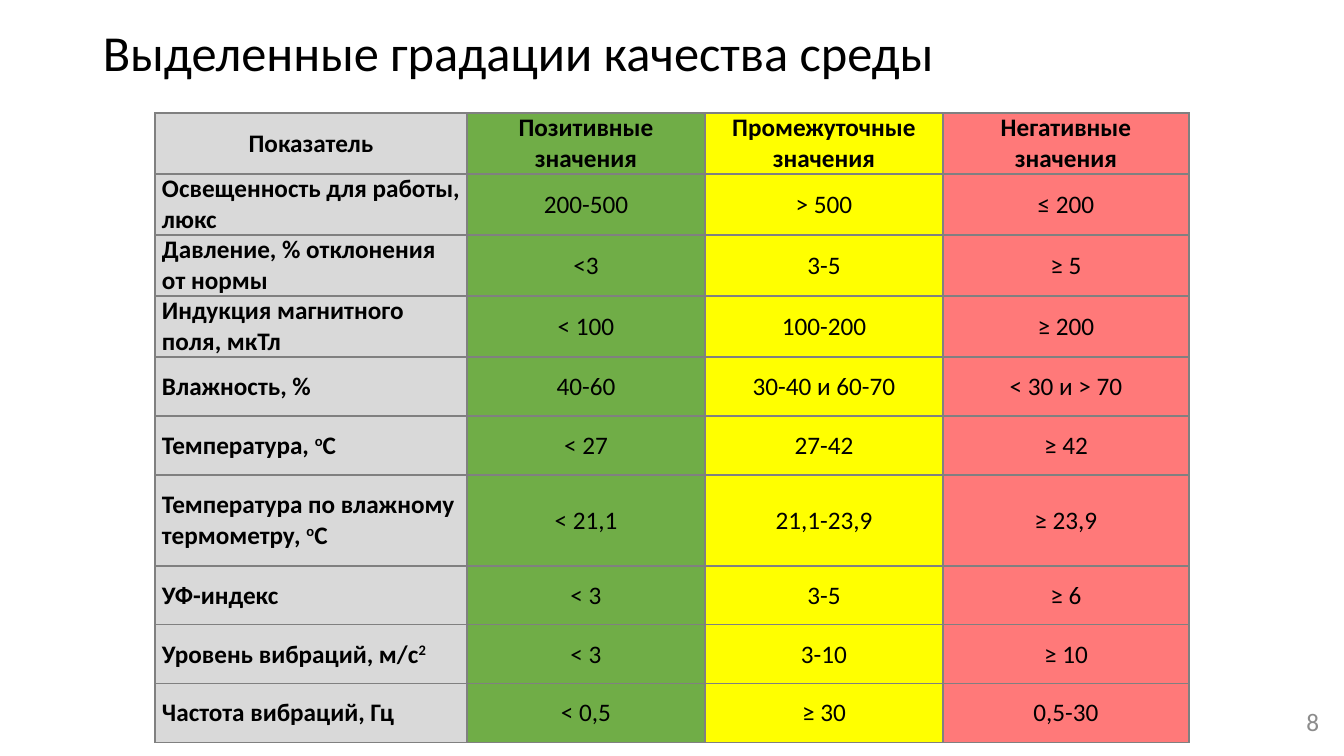
"""Build the slide with the table of environment quality grades."""
import pptx
import pptx.dml.color
import pptx.enum.text
import pptx.oxml
import pptx.oxml.ns
import pptx.util

TITLE = "Выделенные градации качества среды"
PAGE_NUMBER = "8"
SUPERSCRIPT_MARK = "^"
HEADER = ("Показатель", "Позитивные значения", "Промежуточные значения", "Негативные значения")
INDICATORS = [
    ("Освещенность для работы, люкс", "200-500", "> 500", "≤ 200"),
    ("Давление, % отклонения от нормы", "<3", "3-5", "≥ 5"),
    ("Индукция магнитного поля, мкТл", "< 100", "100-200", "≥ 200"),
    ("Влажность, %", "40-60", "30-40 и 60-70", "< 30 и > 70"),
    ("Температура, ^o^C", "< 27", "27-42", "≥ 42"),
    ("Температура по влажному термометру, ^o^C", "< 21,1", "21,1-23,9", "≥ 23,9"),
    ("УФ-индекс", "< 3", "3-5", "≥ 6"),
    ("Уровень вибраций, м/с^2^", "< 3", "3-10", "≥ 10"),
    ("Частота вибраций, Гц", "< 0,5", "≥ 30", "0,5-30"),
]

COLORS = {
    "text": "000000",
    "number": "8C8C8C",
    "border": "808080",
    "indicator": "D9D9D9",
    "positive": "70AD47",
    "middle": "FFFF00",
    "negative": "FF7979",
}
COLUMN_FILLS = ("indicator", "positive", "middle", "negative")
COLUMN_WIDTHS = (312, 238, 238, 246)
ROW_HEIGHTS = (61, 61, 61, 61, 59, 59, 91, 59, 59, 59)
SLIDE_SIZE = (1344, 756)
TABLE_LEFT, TABLE_TOP = 155, 113
CELL_INSET = 7
FONT = "Calibri"
ALIGN = pptx.enum.text.PP_ALIGN
MIDDLE = pptx.enum.text.MSO_ANCHOR.MIDDLE


def px(length):
    return pptx.util.Emu(round(length * 914400 / 100.8))


def color(name):
    return pptx.dml.color.RGBColor.from_string(COLORS[name])


def write(frame, text, size, align, color_name="text", bold=False):
    para = frame.paragraphs[0]
    para.alignment = align
    para.font.name = FONT
    para.font.size = pptx.util.Pt(size)
    para.font.bold = bold
    para.font.color.rgb = color(color_name)
    for index, part in enumerate(text.split(SUPERSCRIPT_MARK)):
        if part:
            span = para.add_run()
            span.text = part
            if index % 2:
                span.font._element.set("baseline", "30000")
    return para


def add_text(page, place, text, size, align, color_name="text"):
    box = page.shapes.add_textbox(*map(px, place))
    box.text_frame.word_wrap = True
    box.text_frame.vertical_anchor = MIDDLE
    return write(box.text_frame, text, size, align, color_name)


def add_borders(cell):
    properties = cell._tc.get_or_add_tcPr()
    for position, side in enumerate(("lnL", "lnR", "lnT", "lnB")):
        border = pptx.oxml.parse_xml(
            f'<a:{side} {pptx.oxml.ns.nsdecls("a")} w="12700"><a:solidFill>'
            f'<a:srgbClr val="{COLORS["border"]}"/></a:solidFill></a:{side}>'
        )
        properties.insert(position, border)


def add_grades(page):
    rows = [HEADER, *INDICATORS]
    frame = page.shapes.add_table(
        len(rows), len(HEADER), px(TABLE_LEFT), px(TABLE_TOP),
        px(sum(COLUMN_WIDTHS)), px(sum(ROW_HEIGHTS)),
    )
    table = frame.table
    for column, width in zip(table.columns, COLUMN_WIDTHS):
        column.width = px(width)
    for row, height in zip(table.rows, ROW_HEIGHTS):
        row.height = px(height)
    for row_index, texts in enumerate(rows):
        for column_index, text in enumerate(texts):
            cell = table.cell(row_index, column_index)
            cell.fill.solid()
            cell.fill.fore_color.rgb = color(COLUMN_FILLS[column_index])
            cell.vertical_anchor = MIDDLE
            cell.margin_left = cell.margin_right = px(CELL_INSET)
            cell.margin_top = cell.margin_bottom = 0
            is_header, is_label = row_index == 0, column_index == 0
            align = ALIGN.LEFT if is_label and not is_header else ALIGN.CENTER
            write(cell.text_frame, text, 18, align, bold=is_header or is_label)
            add_borders(cell)


def main():
    deck = pptx.Presentation()
    deck.slide_width, deck.slide_height = map(px, SLIDE_SIZE)
    page = deck.slides.add_slide(deck.slide_layouts[6])
    title = add_text(page, (93, 11, 1159, 89), TITLE, 36, ALIGN.LEFT)
    title.line_spacing = 0.9
    add_grades(page)
    add_text(page, (1027, 701, 302, 40), PAGE_NUMBER, 18, ALIGN.RIGHT, "number")
    deck.save("out.pptx")


if __name__ == "__main__":
    main()
